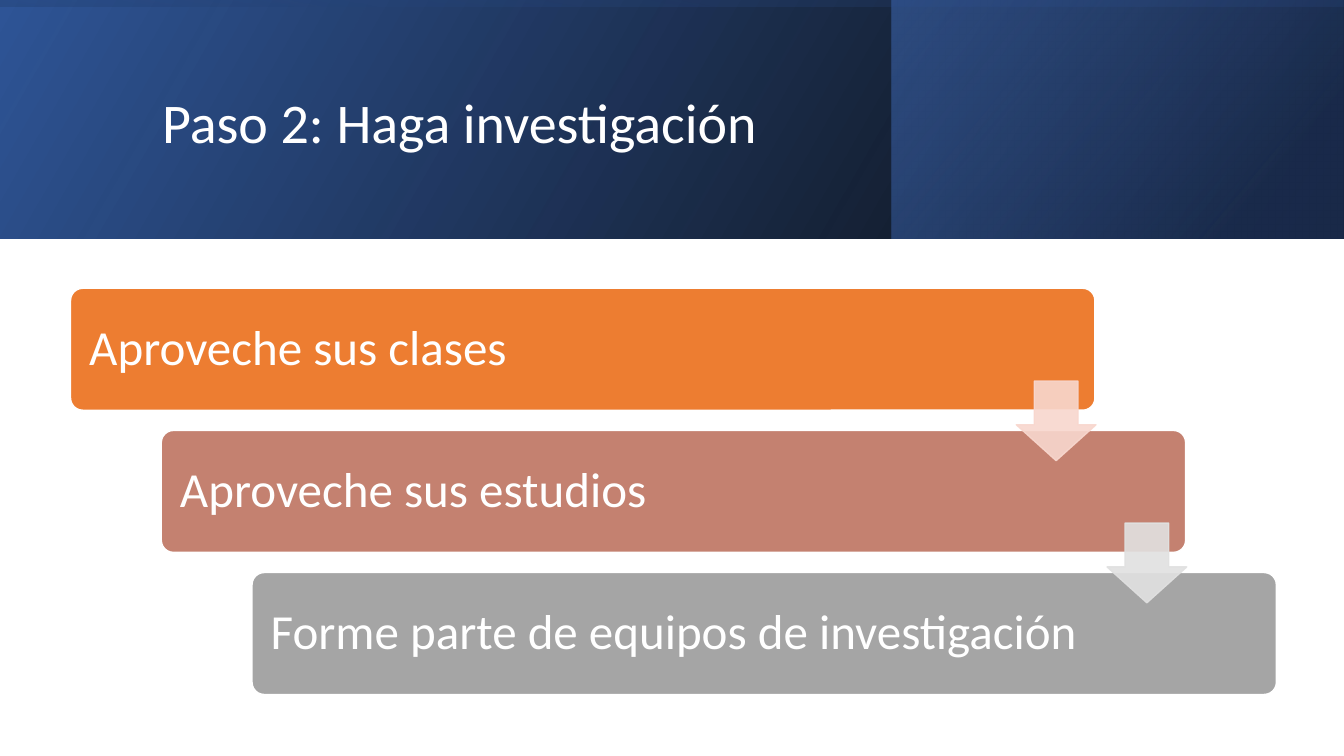
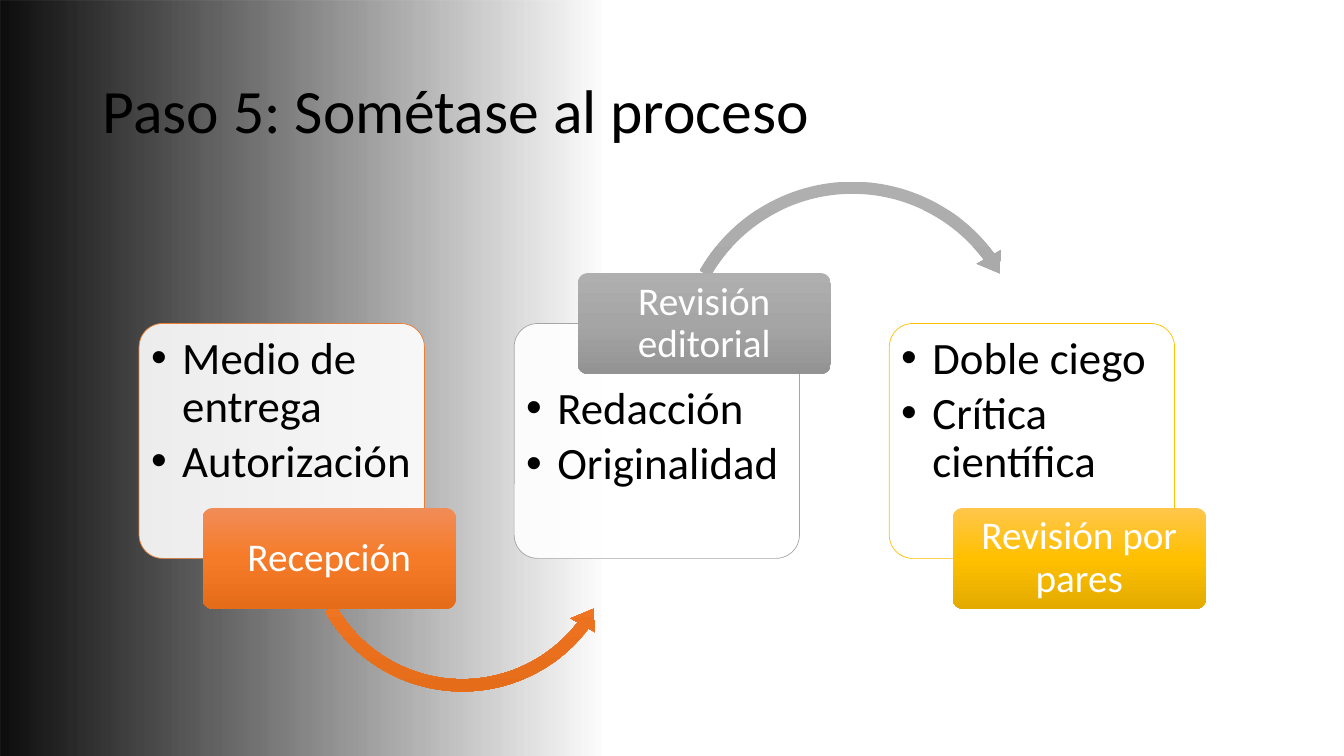
import pptx
import pptx.util
from lxml import etree
from pptx.dml.color import RGBColor
from pptx.enum.shapes import MSO_SHAPE
from pptx.enum.text import MSO_ANCHOR, PP_ALIGN
from pptx.oxml.ns import qn
from pptx.util import Inches, Pt

FONT = "Calibri"
WHITE = RGBColor(0xFF, 0xFF, 0xFF)
BLACK = RGBColor(0x00, 0x00, 0x00)
INK = RGBColor(0x0D, 0x0D, 0x0D)
NAVY = RGBColor(0x20, 0x38, 0x64)
DEEP_BLUE = RGBColor(0x2F, 0x55, 0x97)
BLUE = RGBColor(0x44, 0x72, 0xC4)
ORANGE = RGBColor(0xED, 0x7D, 0x31)
CLAY = RGBColor(0xC4, 0x81, 0x70)
GRAY = RGBColor(0xA5, 0xA5, 0xA5)
GOLD = RGBColor(0xFF, 0xC0, 0x00)
PALE_PINK = RGBColor(0xF8, 0xD7, 0xCE)
PALE_GRAY = RGBColor(0xE1, 0xE1, 0xE1)

SLIDE_W, SLIDE_H, BAND_H = 13.33, 7.5, 2.37
CORNER = [0.1]

# Gradient stops are (position %, colour, opacity %).
ORANGE_SHADES = [(0, RGBColor(0xF1, 0x8C, 0x57), 100),
                 (50, RGBColor(0xF6, 0x7B, 0x28), 100),
                 (100, RGBColor(0xE5, 0x6C, 0x19), 100)]
GRAY_SHADES = [(0, RGBColor(0xAF, 0xAF, 0xAF), 100),
               (50, GRAY, 100),
               (100, RGBColor(0x93, 0x93, 0x93), 100)]
GOLD_SHADES = [(0, RGBColor(0xFF, 0xC6, 0x4B), 100),
               (50, GOLD, 100),
               (100, RGBColor(0xE3, 0xAB, 0x00), 100)]

# (left, top, width, height), rotation, stops, gradient angle
BAND_LAYERS = [
    ((0, 0, SLIDE_W, BAND_H), 0, [(0, BLACK, 96), (100, DEEP_BLUE, 100)], 330),
    ((8.84, 0, 4.48, BAND_H), 0, [(19, NAVY, 68), (100, BLUE, 48)], 320),
    ((5.48, -5.48, BAND_H, SLIDE_W), 270,
     [(23, DEEP_BLUE, 16), (99, BLACK, 45)], 350),
]

RESEARCH_TITLE = "Paso 2: Haga investigación"
RESEARCH_STEPS = [  # text, bar colour, colour of the arrow to the next bar
    ("Aproveche sus clases", ORANGE, PALE_PINK),
    ("Aproveche sus estudios", CLAY, PALE_GRAY),
    ("Forme parte de equipos de investigación", GRAY, None),
]

PROCESS_TITLE = "Paso 5: Sométase al proceso"
PROCESS_STAGES = [
    dict(label="Recepción", points=["Medio de entrega", "Autorización"],
         outline=ORANGE, shades=ORANGE_SHADES, label_on_top=False,
         arrow=(MSO_SHAPE.LEFT_CIRCULAR_ARROW, (2.94, 3.65, 3.29, 3.29),
                [0.037, 4.574, 22.329, 90.245, 0.043])),
    dict(label="Revisión editorial", points=["Redacción", "Originalidad"],
         outline=GRAY, shades=GRAY_SHADES, label_on_top=True,
         arrow=(MSO_SHAPE.CIRCULAR_ARROW, (6.63, 1.72, 3.65, 3.65),
                [0.033, 4.086, 194.159, 125.755, 0.039])),
    dict(label="Revisión por pares", points=["Doble ciego", "Crítica científica"],
         outline=GOLD, shades=GOLD_SHADES, label_on_top=False, arrow=None),
]


def add_child(parent, tag, **attributes):
    child = etree.SubElement(parent, qn(tag))
    for name, value in attributes.items():
        child.set(name, str(value))
    return child


def fill_gradient(shape, stops, angle):
    """Fill with stops along a clockwise angle, which python-pptx cannot make translucent."""
    shape.fill.background()
    properties = shape._element.spPr
    gradient = etree.Element(qn("a:gradFill"), rotWithShape="1")
    stop_list = add_child(gradient, "a:gsLst")
    for position, color, opacity in stops:
        stop = add_child(stop_list, "a:gs", pos=position * 1000)
        add_child(add_child(stop, "a:srgbClr", val=color),
                  "a:alpha", val=opacity * 1000)
    add_child(gradient, "a:lin", ang=angle * 60000, scaled=0)
    properties.replace(properties.find(qn("a:noFill")), gradient)


def set_opacity(parent, opacity):
    color = parent.find(qn("a:solidFill")).find(qn("a:srgbClr"))
    add_child(color, "a:alpha", val=opacity * 1000)


def add_block(slide, kind, box, *, fill=None, stops=None, angle=90, opacity=100,
              line=None, line_width=1, line_opacity=100, adjust=()):
    block = slide.shapes.add_shape(kind, *map(Inches, box))
    block.shadow.inherit = False
    for index, value in enumerate(adjust):
        block.adjustments[index] = value
    if stops:
        fill_gradient(block, stops, angle)
    else:
        block.fill.solid()
        block.fill.fore_color.rgb = fill
        set_opacity(block._element.spPr, opacity)
    if line is None:
        block.line.fill.background()
    else:
        block.line.color.rgb = line
        block.line.width = Pt(line_width)
        set_opacity(block.line._ln, line_opacity)
    return block


def write(shape, *paragraphs, size, color=WHITE, align=PP_ALIGN.LEFT,
          anchor=MSO_ANCHOR.MIDDLE, margins=(0.1, 0.05, 0.1, 0.05),
          bullet_indent=None, space_after=0):
    frame = shape.text_frame
    frame.word_wrap = True
    frame.vertical_anchor = anchor
    (frame.margin_left, frame.margin_top,
     frame.margin_right, frame.margin_bottom) = map(Inches, margins)
    for index, text in enumerate(paragraphs):
        paragraph = frame.add_paragraph() if index else frame.paragraphs[0]
        paragraph.alignment = align
        paragraph.line_spacing = 0.9
        paragraph.space_after = Pt(space_after)
        if bullet_indent:
            properties = paragraph._p.get_or_add_pPr()
            properties.set("marL", str(Inches(bullet_indent)))
            properties.set("indent", str(-Inches(bullet_indent)))
            add_child(properties, "a:buFont", typeface="Arial")
            add_child(properties, "a:buChar", char="•")
        run = paragraph.add_run()
        run.text = text
        run.font.name = FONT
        run.font.size = Pt(size)
        run.font.color.rgb = color


def add_title(slide, text, box, **text_format):
    write(slide.shapes.add_textbox(*map(Inches, box)), text, **text_format)


def build_research(slide):
    for box, rotation, stops, angle in BAND_LAYERS:
        layer = add_block(slide, MSO_SHAPE.RECTANGLE, box, stops=stops, angle=angle)
        layer.rotation = rotation
        layer._element.spPr.xfrm.set("flipH", "1")
    add_title(slide, RESEARCH_TITLE, (1.51, 0.38, 10.63, 1.72), size=40)

    corners = [(0.7 + 0.9 * i, 2.86 + 1.41 * i) for i in range(len(RESEARCH_STEPS))]
    for (left, top), (text, color, _) in zip(corners, RESEARCH_STEPS):
        bar = add_block(slide, MSO_SHAPE.ROUNDED_RECTANGLE, (left, top, 10.16, 1.21),
                        fill=color, line=WHITE, adjust=CORNER)
        write(bar, text, size=35, margins=(0.15,) * 4)
    for (left, top), (_, _, color) in zip(corners, RESEARCH_STEPS):
        if color is not None:
            add_block(slide, MSO_SHAPE.DOWN_ARROW, (left + 9.38, top + 0.92, 0.79, 0.79),
                      fill=color, opacity=90, line=color, line_opacity=90,
                      adjust=[0.55, 0.45])


def build_process(slide):
    add_block(slide, MSO_SHAPE.RECTANGLE, (0, 0, SLIDE_W, SLIDE_H),
              stops=[(0, INK, 100), (45, INK, 0)], angle=0)
    add_title(slide, PROCESS_TITLE, (0.92, 0.4, 11.5, 1.45), size=44, color=BLACK)

    card_top, card_h, label_h = 3.21, 2.33, 1
    for index, stage in enumerate(PROCESS_STAGES):
        left = 1.38 + 3.72 * index
        on_top = stage["label_on_top"]
        card = add_block(slide, MSO_SHAPE.ROUNDED_RECTANGLE,
                         (left, card_top, 2.83, card_h), fill=WHITE, opacity=90,
                         line=stage["outline"], line_width=0.5, adjust=CORNER)
        write(card, *stage["points"], size=32, color=BLACK, anchor=MSO_ANCHOR.TOP,
              margins=(0.05, 0.55 if on_top else 0.05, 0.05, 0.05),
              bullet_indent=0.31, space_after=4.8)
        if stage["arrow"]:
            kind, box, adjust = stage["arrow"]
            add_block(slide, kind, box, stops=stage["shades"], adjust=adjust)
        label_center = card_top if on_top else card_top + card_h
        label = add_block(slide, MSO_SHAPE.ROUNDED_RECTANGLE,
                          (left + 0.63, label_center - label_h / 2, 2.51, label_h),
                          stops=stage["shades"], adjust=CORNER)
        write(label, stage["label"], size=28, align=PP_ALIGN.CENTER,
              margins=(0.06, 0.04, 0.06, 0.04))


def main():
    deck = pptx.Presentation()
    deck.slide_width = Inches(SLIDE_W)
    deck.slide_height = Inches(SLIDE_H)
    for build in (build_research, build_process):
        build(deck.slides.add_slide(deck.slide_layouts[6]))
    deck.save("out.pptx")


if __name__ == "__main__":
    main()
